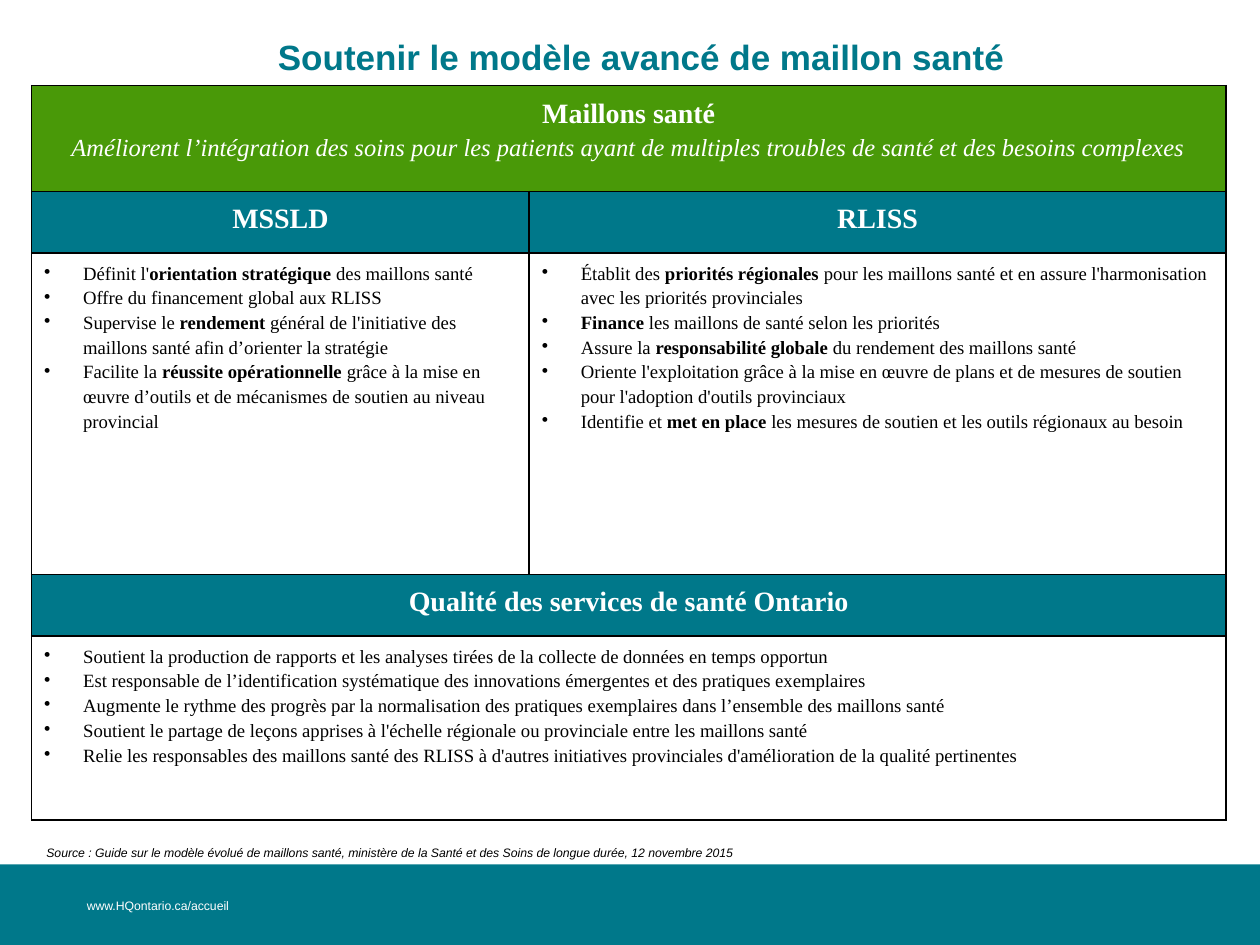
from lxml import etree
from pptx import Presentation
from pptx.dml.color import RGBColor
from pptx.enum.shapes import MSO_SHAPE
from pptx.enum.text import MSO_ANCHOR, MSO_AUTO_SIZE, PP_ALIGN
from pptx.oxml.ns import qn
from pptx.util import Inches, Pt

TEAL = RGBColor(0x00, 0x78, 0x8A)
GREEN = RGBColor(0x49, 0x99, 0x08)
WHITE = RGBColor(0xFF, 0xFF, 0xFF)
BLACK = RGBColor(0x00, 0x00, 0x00)
SANS, SERIF = "Arial", "Times New Roman"
RECT = MSO_SHAPE.RECTANGLE
CENTER = PP_ALIGN.CENTER
MIDDLE, TOP = MSO_ANCHOR.MIDDLE, MSO_ANCHOR.TOP
FIXED = MSO_AUTO_SIZE.NONE

COLS = [3.95, 5.53]
ROWS = [0.84, 0.49, 2.55, 0.49, 1.46]

# Text between asterisks is bold.
MINISTRY = [
    "Définit l'*orientation stratégique* des maillons santé",
    "Offre du financement global aux RLISS",
    "Supervise le *rendement *général de l'initiative des maillons santé "
    "afin d’orienter la stratégie",
    "Facilite la *réussite opérationnelle* grâce à la mise en œuvre "
    "d’outils et de mécanismes de soutien au niveau provincial",
]
REGION = [
    "Établit des *priorités régionales *pour les maillons santé et en assure "
    "l'harmonisation avec les priorités provinciales",
    "*Finance* les maillons de santé selon les priorités",
    "Assure la *responsabilité globale* du rendement des maillons santé",
    "Oriente l'exploitation grâce à la mise en œuvre de plans et de mesures "
    "de soutien pour l'adoption d'outils provinciaux",
    "Identifie et *met en place* les mesures de soutien et les outils "
    "régionaux au besoin",
]
QUALITY = [
    "Soutient la production de rapports et les analyses tirées de la collecte "
    "de données en temps opportun",
    "Est responsable de l’identification systématique des innovations "
    "émergentes et des pratiques exemplaires",
    "Augmente le rythme des progrès par la normalisation des pratiques "
    "exemplaires dans l’ensemble des maillons santé",
    "Soutient le partage de leçons apprises à l'échelle régionale ou "
    "provinciale entre les maillons santé",
    "Relie les responsables des maillons santé des RLISS à d'autres "
    "initiatives provinciales d'amélioration de la qualité pertinentes",
]


class Deck:
    def __init__(self):
        self.prs = Presentation()
        self.prs.slide_width, self.prs.slide_height = Inches(10), Inches(7.5)
        self.slide = self.prs.slides.add_slide(self.prs.slide_layouts[5])

    def run(self, para, text, size, color, font=SERIF, bold=False, italic=False):
        run = para.add_run()
        run.text = text
        face = run.font
        face.name, face.size, face.color.rgb = font, Pt(size), color
        face.bold, face.italic = bold, italic

    def title(self, text, left, top, width, height):
        box = self.slide.shapes.title
        box.left, box.top = Inches(left), Inches(top)
        box.width, box.height = Inches(width), Inches(height)
        frame = box.text_frame
        frame.auto_size, frame.vertical_anchor = FIXED, MIDDLE
        para = frame.paragraphs[0]
        para.alignment = CENTER
        self.run(para, text, 20, TEAL, SANS, bold=True)

    def bar(self, left, top, width, height):
        bar = self.slide.shapes.add_shape(
            RECT, Inches(left), Inches(top), Inches(width), Inches(height))
        bar.shadow.inherit = False
        bar.fill.solid()
        bar.fill.fore_color.rgb = TEAL
        bar.line.fill.background()

    def note(self, text, left, top, width, height, color, italic=False, anchor=TOP):
        box = self.slide.shapes.add_textbox(
            Inches(left), Inches(top), Inches(width), Inches(height))
        frame = box.text_frame
        frame.word_wrap, frame.vertical_anchor = True, anchor
        self.run(frame.paragraphs[0], text, 7, color, SANS, italic=italic)

    def table(self, left, top, cols, rows):
        frame = self.slide.shapes.add_table(
            len(rows), len(cols), Inches(left), Inches(top),
            Inches(sum(cols)), Inches(sum(rows)))
        table = frame.table
        table.first_row = table.horz_banding = False
        for col, width in zip(table.columns, cols):
            col.width = Inches(width)
        for row, height in zip(table.rows, rows):
            row.height = Inches(height)
        for cell in table.iter_cells():
            self.border(cell)
            self.fill(cell, WHITE)
        return table

    def border(self, cell):
        props = cell._tc.get_or_add_tcPr()
        for side in ("a:lnL", "a:lnR", "a:lnT", "a:lnB"):
            line = etree.SubElement(props, qn(side), w=str(Pt(1)))
            solid = etree.SubElement(line, qn("a:solidFill"))
            etree.SubElement(solid, qn("a:srgbClr"), val=str(BLACK))

    def fill(self, cell, color):
        cell.fill.solid()
        cell.fill.fore_color.rgb = color

    def para(self, cell, index):
        frame = cell.text_frame
        para = frame.add_paragraph() if index else frame.paragraphs[0]
        para.line_spacing = 1.2
        return para

    def head(self, cell, color, text, sub=None):
        self.fill(cell, color)
        para = self.para(cell, 0)
        para.alignment = CENTER
        self.run(para, text, 16, WHITE, bold=True)
        if sub:
            para = self.para(cell, 1)
            para.alignment = CENTER
            self.run(para, sub, 14, WHITE, italic=True)

    def bullets(self, cell, items):
        for index, item in enumerate(items):
            para = self.para(cell, index)
            props = para._p.get_or_add_pPr()
            props.set("marL", str(Inches(0.31)))
            props.set("indent", str(-Inches(0.31)))
            etree.SubElement(props, qn("a:buChar"), char="•")
            for part, text in enumerate(item.split("*")):
                if text:
                    self.run(para, text, 10.7, BLACK, bold=part % 2 == 1)


def main():
    deck = Deck()
    deck.bar(0, 6.86, 10, 0.64)
    deck.title("Soutenir le modèle avancé de maillon santé", 0.59, 0, 9, 0.89)
    deck.note("www.HQontario.ca/accueil", 0.59, 7.08, 3.08, 0.27, WHITE)

    table = deck.table(0.25, 0.68, COLS, ROWS)
    for row in (0, 3, 4):
        table.cell(row, 0).merge(table.cell(row, 1))
    deck.head(table.cell(0, 0), GREEN, "Maillons santé",
              "Améliorent l’intégration des soins pour les patients ayant de "
              "multiples troubles de santé et des besoins complexes")
    deck.head(table.cell(1, 0), TEAL, "MSSLD")
    deck.head(table.cell(1, 1), TEAL, "RLISS")
    deck.bullets(table.cell(2, 0), MINISTRY)
    deck.bullets(table.cell(2, 1), REGION)
    deck.head(table.cell(3, 0), TEAL, "Qualité des services de santé Ontario")
    deck.bullets(table.cell(4, 0), QUALITY)

    deck.note("Source : Guide sur le modèle évolué de maillons santé, ministère de "
              "la Santé et des Soins de longue durée, 12 novembre 2015",
              0.27, 6.66, 5.77, 0.22, BLACK, italic=True, anchor=MIDDLE)
    deck.prs.save("out.pptx")


if __name__ == "__main__":
    main()
